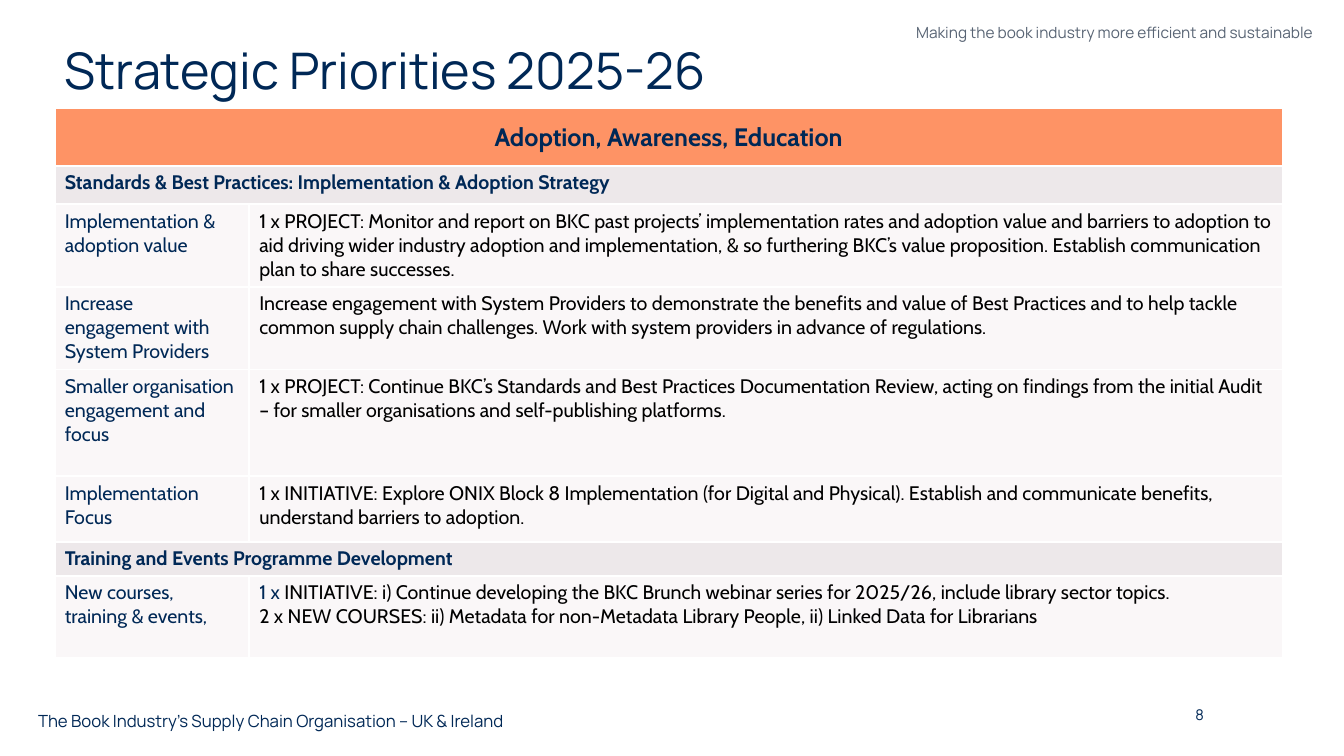
from pptx import Presentation
from pptx.dml.color import RGBColor
from pptx.enum.text import MSO_ANCHOR, PP_ALIGN
from pptx.oxml import parse_xml
from pptx.oxml.ns import nsdecls
from pptx.util import Cm, Pt

NAVY, BLACK, GREY = "002856", "000000", "586474"
ORANGE, BAND, PALE = "FE9365", "EDE8EA", "FAF7F8"
WIDTHS = [4.9, 26.04]
HEAD = {"name": "Cabin", "size": Pt(18), "bold": True}
BOLD = {"name": "Cabin", "size": Pt(14), "bold": True}
BODY = {"name": "Cabin", "size": Pt(14), "bold": False}

# Height in cm, then a heading alone or a label with its detail lines
ROWS = [
    (1.45, "Adoption, Awareness, Education"),
    (0.97, "Standards & Best Practices: Implementation & Adoption Strategy"),
    (2.08, "Implementation & adoption value",
     "1 x PROJECT: Monitor and report on BKC past projects’ implementation "
     "rates and adoption value and barriers to adoption to aid driving wider "
     "industry adoption and implementation, & so furthering BKC’s value "
     "proposition. Establish communication plan to share successes."),
    (2.08, "Increase engagement with System Providers",
     "Increase engagement with System Providers to demonstrate the benefits "
     "and value of Best Practices and to help tackle common supply chain "
     "challenges. Work with system providers in advance of regulations."),
    (2.69, "Smaller organisation engagement and focus",
     "1 x PROJECT: Continue BKC’s Standards and Best Practices Documentation "
     "Review, acting on findings from the initial Audit – for smaller "
     "organisations and self-publishing platforms."),
    (1.65, "Implementation Focus",
     "1 x INITIATIVE: Explore ONIX Block 8 Implementation (for Digital and "
     "Physical). Establish and communicate benefits, understand barriers to "
     "adoption."),
    (0.86, "Training and Events Programme Development"),
    (2.08, "New courses, training & events,",
     [("1 x ", NAVY),
      ("INITIATIVE: i) Continue developing the BKC Brunch webinar series for "
       "2025/26, include library sector topics.", BLACK)],
     "2 x NEW COURSES: ii) Metadata for non-Metadata Library People, "
     "ii) Linked Data for Librarians"),
]


def paint(item, color):
    item.fill.solid()
    item.fill.fore_color.rgb = RGBColor.from_string(color)


def write(para, text, color, font, align=PP_ALIGN.LEFT):
    """Fill a paragraph from a string or a list of (text, colour) runs."""
    para.alignment = align
    for words, tint in [(text, color)] if isinstance(text, str) else text:
        run = para.add_run()
        run.text = words
        for key, value in font.items():
            setattr(run.font, key, value)
        run.font.color.rgb = RGBColor.from_string(tint)


def label(slide, box, text, size, color=NAVY, align=PP_ALIGN.LEFT,
          anchor=MSO_ANCHOR.TOP):
    frame = slide.shapes.add_textbox(*map(Cm, box)).text_frame
    frame.word_wrap = True
    frame.vertical_anchor = anchor
    para = frame.paragraphs[0]
    write(para, text, color, {"name": "Manrope", "size": Pt(size)}, align)
    return para


def edge(cell):
    """Give a cell white borders; call before its fill is set."""
    props = cell._tc.get_or_add_tcPr()
    for side in "LRTB":
        props.append(parse_xml(
            f'<a:ln{side} {nsdecls("a")} w="19050"><a:solidFill>'
            f'<a:srgbClr val="FFFFFF"/></a:solidFill></a:ln{side}>'))


def grid(slide):
    high = sum(row[0] for row in ROWS)
    table = slide.shapes.add_table(
        len(ROWS), 2, Cm(1.38), Cm(2.73), Cm(sum(WIDTHS)), Cm(high)).table
    table.first_row = table.horz_banding = False
    for col, width in zip(table.columns, WIDTHS):
        col.width = Cm(width)
    for i, (height, name, *lines) in enumerate(ROWS):
        table.rows[i].height = Cm(height)
        left, right = table.rows[i].cells
        fill = PALE if lines else BAND if i else ORANGE
        for cell in (left, right):
            edge(cell)
            paint(cell, fill)
        para = left.text_frame.paragraphs[0]
        if lines:
            write(para, name, NAVY, BODY)
            frame = right.text_frame
            for j, line in enumerate(lines):
                para = frame.add_paragraph() if j else frame.paragraphs[0]
                write(para, line, BLACK, BODY)
            continue
        left.merge(right)
        if i:
            write(para, name, NAVY, BOLD)
        else:
            left.vertical_anchor = MSO_ANCHOR.MIDDLE
            write(para, name, NAVY, HEAD, PP_ALIGN.CENTER)


def main():
    deck = Presentation()
    deck.slide_width, deck.slide_height = Cm(33.87), Cm(19.05)
    slide = deck.slides.add_slide(deck.slide_layouts[6])
    label(slide, (22.4, 0.46, 10.95, 0.74),
          "Making the book industry more efficient and sustainable",
          11, GREY, PP_ALIGN.RIGHT)
    title = label(slide, (1.38, 0, 29.21, 3.68), "Strategic Priorities 2025-26",
                  36, anchor=MSO_ANCHOR.MIDDLE)
    title.line_spacing = 0.9
    label(slide, (24.87, 17.65, 5.72, 1.02), "8", 10.5, align=PP_ALIGN.RIGHT)
    label(slide, (0.71, 17.65, 13.44, 1.02),
          "The Book Industry’s Supply Chain Organisation – UK & Ireland",
          12, anchor=MSO_ANCHOR.MIDDLE)
    grid(slide)
    deck.save("out.pptx")


if __name__ == "__main__":
    main()
